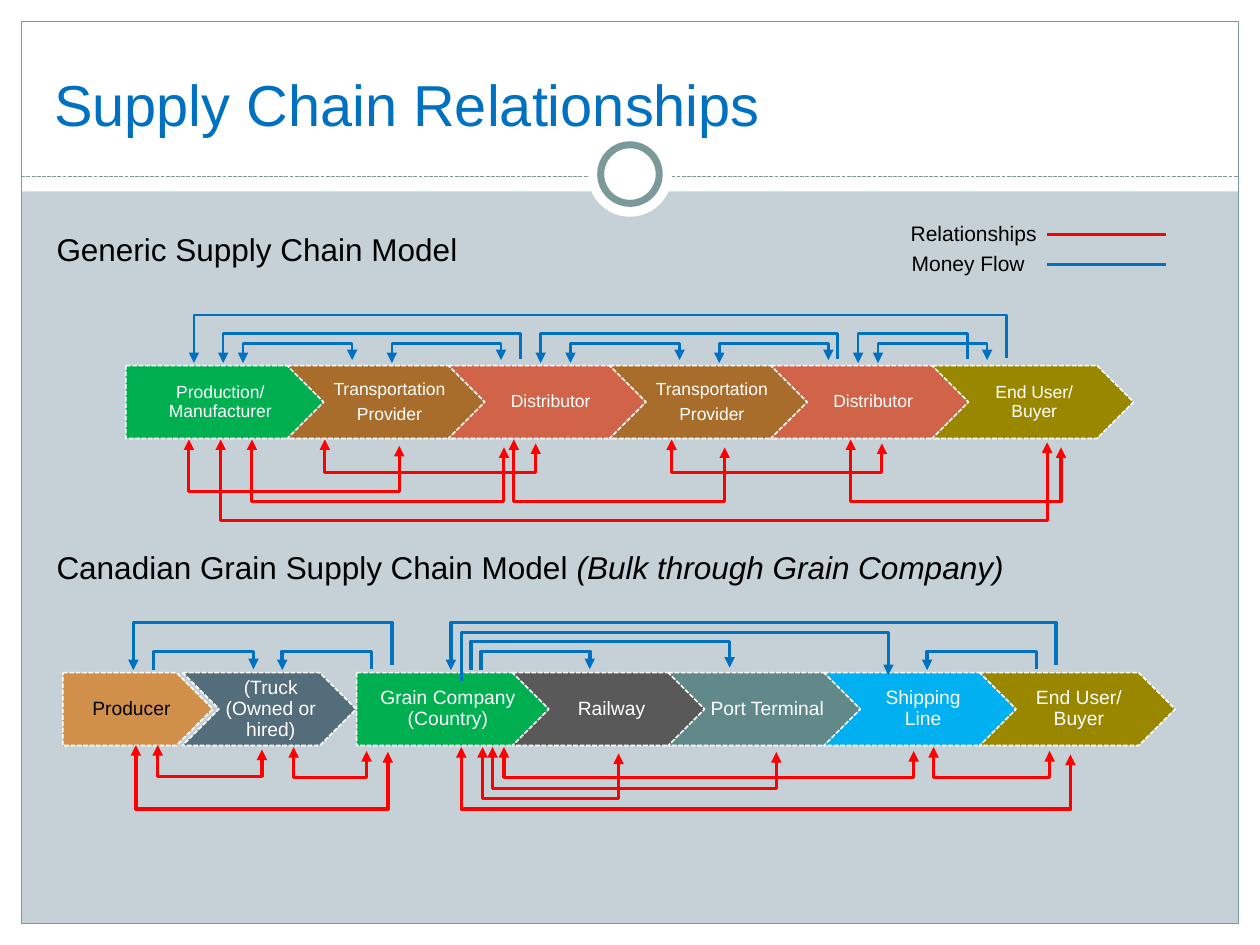
from lxml import etree
from pptx import Presentation
from pptx.dml.color import RGBColor
from pptx.enum.dml import MSO_LINE
from pptx.enum.shapes import MSO_CONNECTOR, MSO_SHAPE
from pptx.enum.text import MSO_ANCHOR, MSO_AUTO_SIZE, PP_ALIGN
from pptx.oxml.ns import qn
from pptx.util import Cm, Pt

RECT, OVAL = MSO_SHAPE.RECTANGLE, MSO_SHAPE.OVAL
PLATE, CHEVRON = MSO_SHAPE.PENTAGON, MSO_SHAPE.CHEVRON
STRAIGHT, DASH = MSO_CONNECTOR.STRAIGHT, MSO_LINE.SQUARE_DOT
LEFT, CENTER = PP_ALIGN.LEFT, PP_ALIGN.CENTER
MIDDLE, TOP = MSO_ANCHOR.MIDDLE, MSO_ANCHOR.TOP
FIT = MSO_AUTO_SIZE.SHAPE_TO_FIT_TEXT
FONT = "Arial"
WIDE, HIGH = 25.4, 19.05
STEP_H = 1.47

COLORS = {
    "back": "C5D1D7", "white": "FFFFFF", "black": "000000", "frame": "7C999A",
    "red": "FF0000", "blue": "0070C0", "green": "00B050", "brown": "A96D2B",
    "coral": "D16349", "olive": "998700", "gray": "595959", "teal": "61898A",
    "sky": "00B0F0", "tan": "D19049", "slate": "546D7A",
}

# Steps: text, fill
GENERIC = [
    ("Production/ Manufacturer", "green"), ("Transportation\nProvider", "brown"),
    ("Distributor", "coral"), ("Transportation\nProvider", "brown"),
    ("Distributor", "coral"), ("End User/ Buyer", "olive"),
]
GRAIN = [
    ("Grain Company (Country)", "green"), ("Railway", "gray"),
    ("Port Terminal", "teal"), ("Shipping Line", "sky"),
    ("End User/ Buyer", "olive"),
]

# Wires: left x, right x, bar y, right foot y, ends with an arrowhead
GENERIC_TIES = [
    (4.45, 21.11, 10.49, 8.92, "LR"), (17.15, 21.39, 10.11, 9.02, "LR"),
    (13.54, 17.78, 9.53, 8.94, "LR"), (10.36, 14.61, 10.11, 9.02, "LR"),
    (6.55, 10.8, 9.53, 8.94, "LR"), (3.81, 8.05, 9.91, 8.99, "LR"),
    (5.08, 10.16, 10.11, 9.02, "LR"),
]
GRAIN_TIES = [
    (9.3, 21.58, 16.31, 15.21, "LR"), (9.73, 12.47, 16.1, 15.19, "LR"),
    (9.93, 15.65, 15.9, 15.16, "LR"), (10.16, 18.42, 15.67, 15.14, "LR"),
    (5.92, 7.39, 15.67, 15.14, "LR"), (18.82, 21.16, 15.67, 15.14, "LR"),
]
PRODUCER_TIES = [
    (2.74, 7.82, 16.31, 15.16, "LR"), (3.18, 5.28, 15.65, 15.11, "LR"),
]
GENERIC_CASH = [
    (17.3, 19.51, 6.73, 7.24, "L"), (3.91, 20.29, 6.35, 7.21, "L"),
    (10.9, 16.89, 6.73, 7.24, "L"), (4.5, 10.49, 6.73, 7.24, "L"),
] + [(x, x + 2.2, 6.93, 7.26, "LR") for x in (4.9, 7.9, 11.5, 14.5, 17.7)]
GRAIN_CASH = [
    (2.69, 7.9, 12.55, 13.41, "L"), (9.09, 21.29, 12.55, 13.41, "L"),
    (9.7, 11.89, 13.13, 13.49, "R"), (9.5, 14.71, 12.93, 13.46, "R"),
    (3.1, 5.11, 13.13, 13.49, "R"), (18.69, 20.9, 13.13, 13.49, "L"),
    (5.69, 7.49, 13.13, 13.49, "L"),
]
SHIP_CASH = [(9.3, 17.91, 12.75, 13.61, "R")]


def rgb(name):
    return RGBColor.from_string(COLORS[name])


def stroke(line, color, width, dash=None):
    line.color.rgb = rgb(color)
    line.width = Pt(width)
    if dash:
        line.dash_style = dash


def add_run(para, text, size, color, italic=False):
    run = para.add_run()
    run.text = text
    font = run.font
    font.name, font.size, font.italic = FONT, Pt(size), italic
    font.color.rgb = rgb(color)


def add_box(slide, kind, box, fill=None):
    shape = slide.shapes.add_shape(kind, *map(Cm, box))
    shape.shadow.inherit = False
    if fill:
        shape.fill.solid()
        shape.fill.fore_color.rgb = rgb(fill)
    else:
        shape.fill.background()
    shape.line.fill.background()
    return shape


def add_line(slide, x1, x2, y, color, width, dash=None):
    line = slide.shapes.add_connector(STRAIGHT, Cm(x1), Cm(y), Cm(x2), Cm(y))
    stroke(line.line, color, width, dash)
    etree.SubElement(line._element.spPr, qn("a:effectLst"))


def add_label(slide, box, runs, size, color="black", align=LEFT, anchor=TOP, wrap=False):
    frame = slide.shapes.add_textbox(*map(Cm, box)).text_frame
    frame.word_wrap = wrap
    if not wrap:
        frame.auto_size = FIT
    frame.vertical_anchor = anchor
    para = frame.paragraphs[0]
    para.alignment = align
    for text, italic in runs:
        add_run(para, text, size, color, italic)


def add_step(slide, kind, box, text, fill, size, color="white"):
    shape = add_box(slide, kind, box, fill)
    stroke(shape.line, "white", 0.9, DASH)
    frame = shape.text_frame
    frame.word_wrap = True
    frame.vertical_anchor = MIDDLE
    frame.margin_left = Cm(0.15 if kind == PLATE else 0.1)
    frame.margin_right = Cm(0.04)
    frame.margin_top = frame.margin_bottom = Cm(0.08)
    for i, part in enumerate(text.split("\n")):
        para = frame.add_paragraph() if i else frame.paragraphs[0]
        para.alignment = CENTER
        para.line_spacing = 0.9
        para.space_after = Pt(size * 0.35)
        add_run(para, part, size, color)


def add_chain(slide, steps, left, top, width, pitch, size):
    for i, (text, fill) in enumerate(steps):
        kind = CHEVRON if i else PLATE
        add_step(slide, kind, (left + i * pitch, top, width, STEP_H), text, fill, size)


def add_wires(slide, wires, foot, color, width):
    for x1, x2, bar, end, heads in wires:
        path = [(Cm(x), Cm(y)) for x, y in ((x2, end), (x2, bar), (x1, bar), (x1, foot))]
        pen = slide.shapes.build_freeform(*path[0])
        pen.add_line_segments(path[1:], close=False)
        wire = pen.convert_to_shape()
        wire.shadow.inherit = False
        wire.fill.background()
        stroke(wire.line, color, width)
        for side, tag in (("R", "a:headEnd"), ("L", "a:tailEnd")):
            if side in heads:
                etree.SubElement(wire.line._get_or_add_ln(), qn(tag), type="triangle")


def add_frame(slide):
    slide.background.fill.solid()
    slide.background.fill.fore_color.rgb = rgb("back")
    edge = 0.43
    for box in ((0, HIGH - edge, WIDE, edge), (0, 0, WIDE, 3.86),
                (0, 0, edge, HIGH), (WIDE - edge, 0, edge, HIGH)):
        add_box(slide, RECT, box, "white")
    border = add_box(slide, RECT, (edge, edge, WIDE - 2 * edge, HIGH - 2 * edge))
    stroke(border.line, "frame", 0.75)
    add_line(slide, edge, WIDE - edge, 3.56, "frame", 0.75, DASH)
    add_box(slide, OVAL, (11.85, 2.67, 1.7, 1.7), "white")
    ring = add_box(slide, OVAL, (12.11, 2.92, 1.18, 1.18), "white")
    stroke(ring.line, "frame", 4)


def main():
    deck = Presentation()
    deck.slide_width, deck.slide_height = Cm(WIDE), Cm(HIGH)
    slide = deck.slides.add_slide(deck.slide_layouts[6])

    # Frame and title
    add_frame(slide)
    add_label(slide, (0.84, 1.04, 23.7, 2.11), [("Supply Chain Relationships", False)],
              33, "blue", anchor=MIDDLE, wrap=True)

    # Chains
    add_chain(slide, GENERIC, 2.54, 7.37, 4.06, 3.25, 10)
    add_chain(slide, GRAIN, 7.19, 13.56, 3.94, 3.14, 11)
    add_step(slide, PLATE, (1.27, 13.56, 3.02, STEP_H), "Producer", "tan", 11, "black")
    add_step(slide, CHEVRON, (3.68, 13.56, 3.5, STEP_H), "(Truck (Owned or hired)", "slate", 11)

    # Relationships below the chains
    add_wires(slide, GENERIC_TIES, 8.86, "red", 1.75)
    add_wires(slide, GRAIN_TIES, 15.06, "red", 2)
    add_wires(slide, PRODUCER_TIES, 15.02, "red", 2)

    # Headings
    add_label(slide, (0.89, 4.52, 8.66, 1.02), [("Generic Supply Chain Model", False)], 18)
    add_label(slide, (0.89, 10.92, 19.79, 1.02),
              [("Canadian Grain Supply Chain Model ", False),
               ("(Bulk through Grain Company)", True)], 18)

    # Money flow above the chains
    add_wires(slide, GENERIC_CASH, 7.32, "blue", 1.5)
    add_wires(slide, GRAIN_CASH, 13.51, "blue", 2)
    add_wires(slide, SHIP_CASH, 13.72, "blue", 2)

    # Legend
    add_line(slide, 21.11, 23.5, 4.72, "red", 1.75)
    add_line(slide, 21.11, 23.5, 5.33, "blue", 1.75)
    add_label(slide, (18.11, 4.32, 3.07, 0.76), [("Relationships", False)], 12)
    add_label(slide, (18.11, 4.93, 2.82, 0.76), [("Money Flow", False)], 12, align=CENTER)

    deck.save("out.pptx")


if __name__ == "__main__":
    main()
